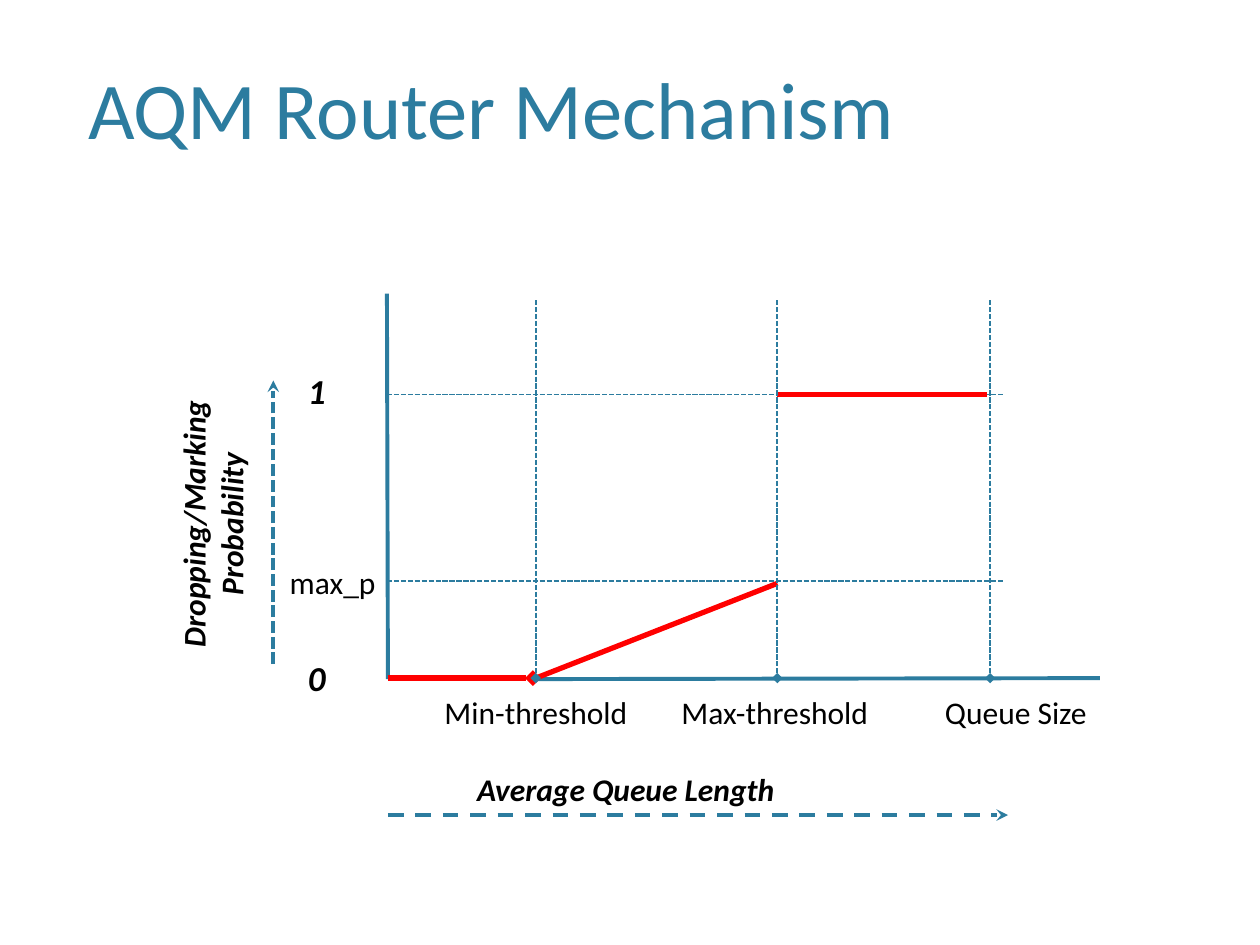
from lxml.etree import SubElement
from pptx import Presentation
from pptx.dml.color import RGBColor
from pptx.enum.dml import MSO_LINE_DASH_STYLE as Dash
from pptx.enum.shapes import MSO_CONNECTOR as Connector
from pptx.enum.text import MSO_ANCHOR as Anchor, MSO_AUTO_SIZE as AutoSize, PP_ALIGN as Align
from pptx.oxml.ns import qn
from pptx.util import Cm, Pt

# Content: colours, plot positions in cm, lines and labels
TEAL, RED, BLACK = "2C7C9F", "FF0000", "000000"
FONT = "Calibri"
TITLE = "AQM Router Mechanism"

AXIS_X, MIN_X, MAX_X, QUEUE_X = 7.82, 10.8, 15.67, 19.96
BASE_Y, MAX_P_Y, ONE_Y, GRID_TOP = 13.67, 11.71, 7.95, 6.05
GRID_RIGHT = 20.24

AXIS = dict(color=TEAL, width=2.25)
GRID = dict(color=TEAL, width=1, dash=Dash.SQUARE_DOT)
THRESHOLD = dict(GRID, tail="diamond")
CURVE = dict(color=RED, width=3)
X_ARROW = dict(AXIS, dash=Dash.DASH, tail="stealth")
Y_ARROW = dict(AXIS, dash=Dash.SQUARE_DOT, tail="stealth")

LINES = [  # start x, start y, end x, end y, style; back to front
    (10.74, 13.69, 22.17, BASE_Y, AXIS),
    (7.8, 5.92, AXIS_X, 13.69, AXIS),
    *[(7.8, y, GRID_RIGHT, y, GRID) for y in (MAX_P_Y, ONE_Y)],
    (AXIS_X, BASE_Y, 10.74, BASE_Y, dict(CURVE, tail="diamond")),
    (MIN_X, BASE_Y, MAX_X, 11.76, CURVE),
    (MAX_X, ONE_Y, 19.89, ONE_Y, CURVE),
    *[(x, GRID_TOP, x, BASE_Y, THRESHOLD) for x in (MIN_X, MAX_X, QUEUE_X)],
    (AXIS_X, 16.43, 20.32, 16.43, X_ARROW),
    (5.51, 13.39, 5.51, 7.67, Y_ARROW),
]

PLAIN = dict(size=18, inset=0, align=Align.CENTER)
EMPHASIS = dict(PLAIN, bold=True, italic=True)
TICK = dict(EMPHASIS, size=20, inset=None)

LABELS = [  # text, left, top, width, height, style
    ("1", 5.33, 7.32, 2.11, 1.09, TICK),
    ("0", 5.33, 13.11, 2.11, 1.09, TICK),
    ("max_p", 3.38, 11.35, 4.19, 0.76, dict(PLAIN, align=Align.RIGHT)),
    ("Min-threshold", 7.49, 13.97, 6.63, 0.76, PLAIN),
    ("Max-threshold", 12.37, 13.97, 6.5, 0.76, PLAIN),
    ("Queue Size", 19.05, 13.97, 5.08, 0.76, dict(PLAIN, align=Align.LEFT)),
    ("Average Queue Length", 6.25, 15.39, 12.73, 1.02, dict(EMPHASIS, inset=None)),
    ("Dropping/Marking Probability", 1.73, 9.8, 5.08, 1.52, dict(EMPHASIS, rotation=270)),
]


def rgb(color):
    return RGBColor.from_string(color)


def place(shape, left, top, width, height):
    for side, length in dict(left=left, top=top, width=width, height=height).items():
        setattr(shape, side, Cm(length))


def write(frame, text, size, color, align, bold=False, italic=False):
    paragraph = frame.paragraphs[0]
    paragraph.alignment = align
    run = paragraph.add_run()
    run.text = text
    for key, value in dict(name=FONT, size=Pt(size), bold=bold, italic=italic).items():
        setattr(run.font, key, value)
    run.font.color.rgb = rgb(color)


def add_line(slide, x1, y1, x2, y2, color, width, dash=None, tail=None):
    line = slide.shapes.add_connector(Connector.STRAIGHT, Cm(x1), Cm(y1), Cm(x2), Cm(y2))
    line.line.color.rgb = rgb(color)
    line.line.width = Pt(width)
    if dash:
        line.line.dash_style = dash
    if tail:
        SubElement(line.line._get_or_add_ln(), qn("a:tailEnd"), type=tail)
    SubElement(line._element.spPr, qn("a:effectLst"))


def add_label(slide, text, box, size, align, inset=None, rotation=0, **emphasis):
    label = slide.shapes.add_textbox(*[Cm(length) for length in box])
    label.rotation = rotation
    frame = label.text_frame
    frame.word_wrap = True
    frame.auto_size = AutoSize.SHAPE_TO_FIT_TEXT
    if inset is not None:
        for side in ("left", "top", "right", "bottom"):
            setattr(frame, f"margin_{side}", Cm(inset))
    write(frame, text, size, BLACK, align, **emphasis)


def main():
    deck = Presentation()
    deck.slide_width, deck.slide_height = Cm(25.4), Cm(19.05)
    slide = deck.slides.add_slide(deck.slide_layouts[5])

    # Title
    title = slide.shapes.title
    place(title, 1.52, 0.3, 22.35, 3.71)
    title.text_frame.vertical_anchor = Anchor.MIDDLE
    title.text_frame.auto_size = AutoSize.NONE
    write(title.text_frame, TITLE, 46, TEAL, Align.LEFT)

    # Axes, grid, probability curve and direction arrows
    for *ends, style in LINES:
        add_line(slide, *ends, **style)

    # Axis and tick labels
    for text, *box, style in LABELS:
        add_label(slide, text, box, **style)

    deck.save("out.pptx")


if __name__ == "__main__":
    main()
